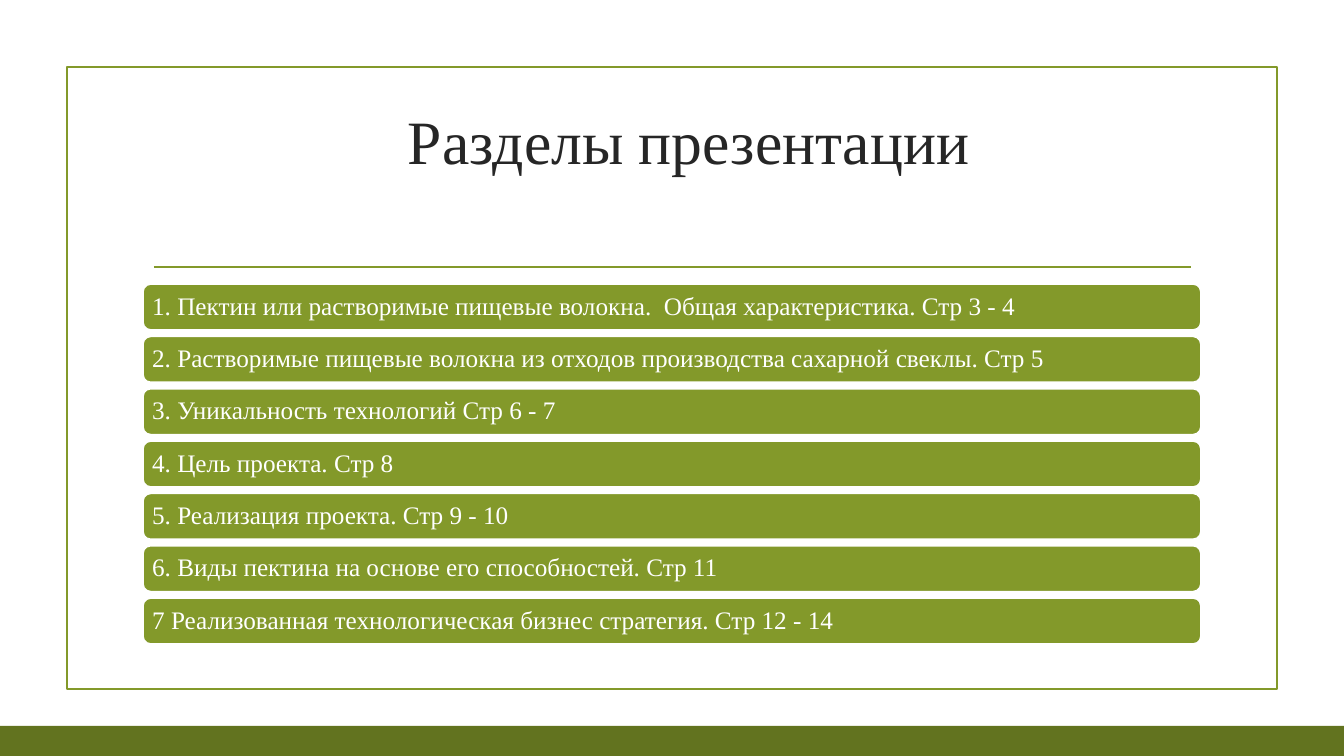
from pptx import Presentation
from pptx.dml.color import RGBColor
from pptx.enum.shapes import MSO_CONNECTOR as Connector, MSO_SHAPE as Shape
from pptx.enum.text import MSO_ANCHOR as Anchor, PP_ALIGN as Align
from pptx.util import Emu, Pt
from lxml.etree import SubElement
from pptx.oxml.ns import qn

COLORS = {"olive": "83992A", "moss": "62731F", "ink": "262626", "white": "FFFFFF"}
FONT = "Times New Roman"
SECTIONS = [
    "1. Пектин или растворимые пищевые волокна.  Общая характеристика. Стр 3 - 4",
    "2. Растворимые пищевые волокна из отходов производства сахарной свеклы. Стр 5",
    "3. Уникальность технологий Стр 6 - 7",
    "4. Цель проекта. Стр 8",
    "5. Реализация проекта. Стр 9 - 10",
    "6. Виды пектина на основе его способностей. Стр 11",
    "7 Реализованная технологическая бизнес стратегия. Стр 12 - 14",
]


def px(*lengths):
    return [Emu(round(length * 914400 / 100.8)) for length in lengths]


def write(holder, text, size, color, align=Align.LEFT, inset=9, spacing=1.0):
    frame = holder.text_frame
    frame.word_wrap = True
    frame.vertical_anchor = Anchor.MIDDLE
    frame.margin_left, frame.margin_right = px(inset, inset)
    paragraph = frame.paragraphs[0]
    paragraph.alignment = align
    paragraph.line_spacing = spacing
    run = paragraph.add_run()
    run.text = text
    run.font.name = FONT
    run.font.size = Pt(size)
    run.font.color.rgb = RGBColor.from_string(color)


deck = Presentation()
deck.slide_width, deck.slide_height = px(1344, 756)
slide = deck.slides.add_slide(deck.slide_layouts[6])
shapes = slide.shapes

border = shapes.add_shape(Shape.RECTANGLE, *px(67, 67, 1210, 622))
border.shadow.inherit = False
border.fill.background()
border.line.color.rgb = RGBColor.from_string(COLORS["olive"])
border.line.width = Pt(1.25)

footer_band = shapes.add_shape(Shape.RECTANGLE, *px(0, 726, 1344, 30))
footer_band.shadow.inherit = False
footer_band.fill.solid()
footer_band.fill.fore_color.rgb = RGBColor.from_string(COLORS["moss"])
footer_band.line.fill.background()

title_rule = shapes.add_connector(Connector.STRAIGHT, *px(154, 267, 1191, 267))
title_rule.line.color.rgb = RGBColor.from_string(COLORS["olive"])
title_rule.line.width = Pt(1.25)
SubElement(title_rule._element.spPr, qn("a:effectLst"))

title = shapes.add_textbox(*px(160, 82, 1058, 116))
write(title, "Разделы презентации", 44, COLORS["ink"], align=Align.CENTER)

first_top, last_top = 284, 598
for index, section in enumerate(SECTIONS):
    top = first_top + (last_top - first_top) * index / (len(SECTIONS) - 1)
    bar = shapes.add_shape(Shape.ROUNDED_RECTANGLE, *px(143, top, 1058, 46))
    bar.shadow.inherit = False
    bar.fill.solid()
    bar.fill.fore_color.rgb = RGBColor.from_string(COLORS["olive"])
    bar.line.color.rgb = RGBColor.from_string(COLORS["white"])
    bar.line.width = Pt(1.25)
    write(bar, section, 18, COLORS["white"], inset=7, spacing=0.9)

deck.save("out.pptx")
